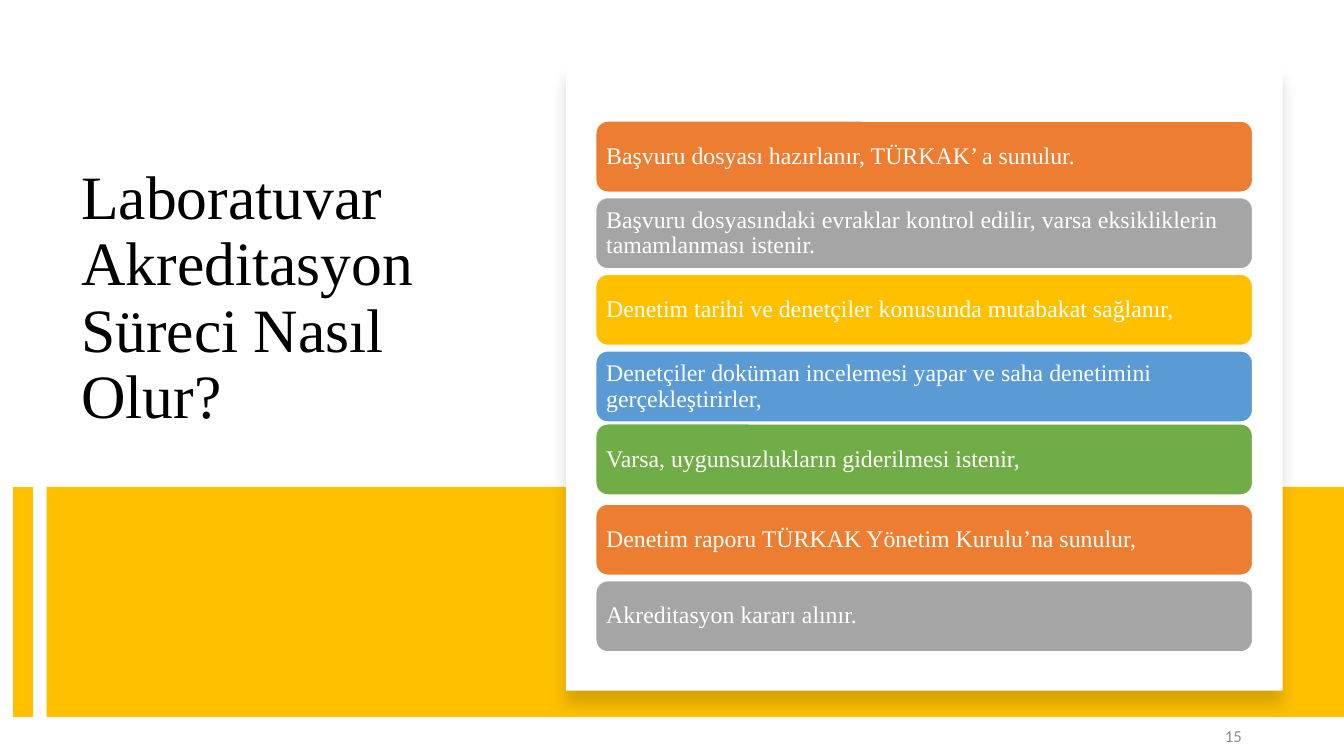
"""Build the slide on the laboratory accreditation process."""
from dataclasses import dataclass

from lxml.etree import SubElement
from pptx import Presentation
from pptx.dml.color import RGBColor
from pptx.enum.shapes import MSO_CONNECTOR, MSO_SHAPE
from pptx.enum.text import MSO_ANCHOR, PP_ALIGN
from pptx.oxml.ns import qn
from pptx.util import Pt


@dataclass(frozen=True)
class Theme:
    """Colours, fonts and type sizes of the slide."""
    white: str = "FFFFFF"
    black: str = "000000"
    gold: str = "FFC000"
    orange: str = "ED7D31"
    grey: str = "A5A5A5"
    blue: str = "5B9BD5"
    green: str = "70AD47"
    number_grey: str = "8C8C8C"
    serif: str = "Times New Roman"
    sans: str = "Calibri"
    title_size: int = 44
    step_size: int = 17
    number_size: int = 12


THEME = Theme()

STEPS = [
    ("Başvuru dosyası hazırlanır, TÜRKAK’ a sunulur.", THEME.orange),
    ("Başvuru dosyasındaki evraklar kontrol edilir, varsa eksikliklerin "
     "tamamlanması istenir.", THEME.grey),
    ("Denetim tarihi ve denetçiler konusunda mutabakat sağlanır,", THEME.gold),
    ("Denetçiler doküman incelemesi yapar ve saha denetimini "
     "gerçekleştirirler,", THEME.blue),
    ("Varsa, uygunsuzlukların giderilmesi istenir,", THEME.green),
    ("Denetim raporu TÜRKAK Yönetim Kurulu’na sunulur,", THEME.orange),
    ("Akreditasyon kararı alınır.", THEME.grey),
]
STEP_LEFT, STEP_TOP, STEP_WIDTH, STEP_HEIGHT = 425.6, 86.5, 469.2, 50.8
STEP_PITCH = 54.72
STEP_SHIFTS = {4: -2.6}


def write_text(holder, text, size, color, font, anchor, align=PP_ALIGN.LEFT,
               line_spacing=1.0):
    """Put one formatted paragraph into a shape or text box."""
    frame = holder.text_frame
    frame.word_wrap = True
    frame.vertical_anchor = anchor
    paragraph = frame.paragraphs[0]
    paragraph.text = text
    paragraph.alignment = align
    paragraph.line_spacing = line_spacing
    run_font = paragraph.runs[0].font
    run_font.size = Pt(size)
    run_font.name = font
    run_font.color.rgb = RGBColor.from_string(color)


def add_block(slide, preset, left, top, width, height, fill):
    """Add a plain filled shape without outline or shadow."""
    block = slide.shapes.add_shape(
        preset, Pt(left), Pt(top), Pt(width), Pt(height))
    block.shadow.inherit = False
    block.fill.solid()
    block.fill.fore_color.rgb = RGBColor.from_string(fill)
    block.line.fill.background()
    return block


def add_label(slide, left, top, width, height, text, **style):
    """Add a text box with one formatted paragraph."""
    label = slide.shapes.add_textbox(Pt(left), Pt(top), Pt(width), Pt(height))
    write_text(label, text, **style)


def add_accent(slide, x, top, bottom, width):
    """Add the thick vertical line beside the band."""
    accent = slide.shapes.add_connector(
        MSO_CONNECTOR.STRAIGHT, Pt(x), Pt(top), Pt(x), Pt(bottom))
    accent.line.color.rgb = RGBColor.from_string(THEME.gold)
    accent.line.width = Pt(width)
    SubElement(accent._element.spPr, qn("a:effectLst"))


def cast_shadow(card, blur, distance, opacity):
    """Give a shape a soft shadow that falls straight down."""
    effects = card._element.spPr.find(qn("a:effectLst"))
    shadow = SubElement(
        effects, qn("a:outerShdw"), blurRad=str(Pt(blur)),
        dist=str(Pt(distance)), dir="5400000", algn="t", rotWithShape="0")
    tint = SubElement(shadow, qn("a:srgbClr"), val=THEME.black)
    SubElement(tint, qn("a:alpha"), val=str(opacity * 1000))


def add_step(slide, index, text, fill):
    """Add one rounded step of the process."""
    top = STEP_TOP + index * STEP_PITCH + STEP_SHIFTS.get(index, 0)
    step = add_block(slide, MSO_SHAPE.ROUNDED_RECTANGLE, STEP_LEFT, top,
                     STEP_WIDTH, STEP_HEIGHT, fill)
    step.line.color.rgb = RGBColor.from_string(THEME.white)
    step.line.width = Pt(1)
    frame = step.text_frame
    frame.margin_left = frame.margin_right = Pt(5)
    frame.margin_top = frame.margin_bottom = Pt(5)
    write_text(step, text, THEME.step_size, THEME.white, THEME.serif,
               MSO_ANCHOR.MIDDLE, line_spacing=0.9)


def main():
    """Build and save the slide."""
    deck = Presentation()
    deck.slide_width, deck.slide_height = Pt(960), Pt(540)
    slide = deck.slides.add_slide(deck.slide_layouts[6])

    add_label(slide, 51, 115.2, 298.8, 211.7,
              "Laboratuvar Akreditasyon Süreci Nasıl Olur?",
              size=THEME.title_size, color=THEME.black, font=THEME.serif,
              anchor=MSO_ANCHOR.TOP, line_spacing=0.9)
    add_block(slide, MSO_SHAPE.RECTANGLE, 33.3, 347.8, 926.7, 164.2, THEME.gold)
    add_accent(slide, 16.5, 347.8, 512, 14)
    card = add_block(slide, MSO_SHAPE.RECTANGLE, 404.2, 46.1, 512, 447.3,
                     THEME.white)
    cast_shadow(card, blur=11, distance=10, opacity=15)
    add_label(slide, 678.2, 511.2, 216, 28.8, "15",
              size=THEME.number_size, color=THEME.number_grey,
              font=THEME.sans, anchor=MSO_ANCHOR.MIDDLE, align=PP_ALIGN.RIGHT)
    for index, (text, fill) in enumerate(STEPS):
        add_step(slide, index, text, fill)

    deck.save("out.pptx")


if __name__ == "__main__":
    main()
